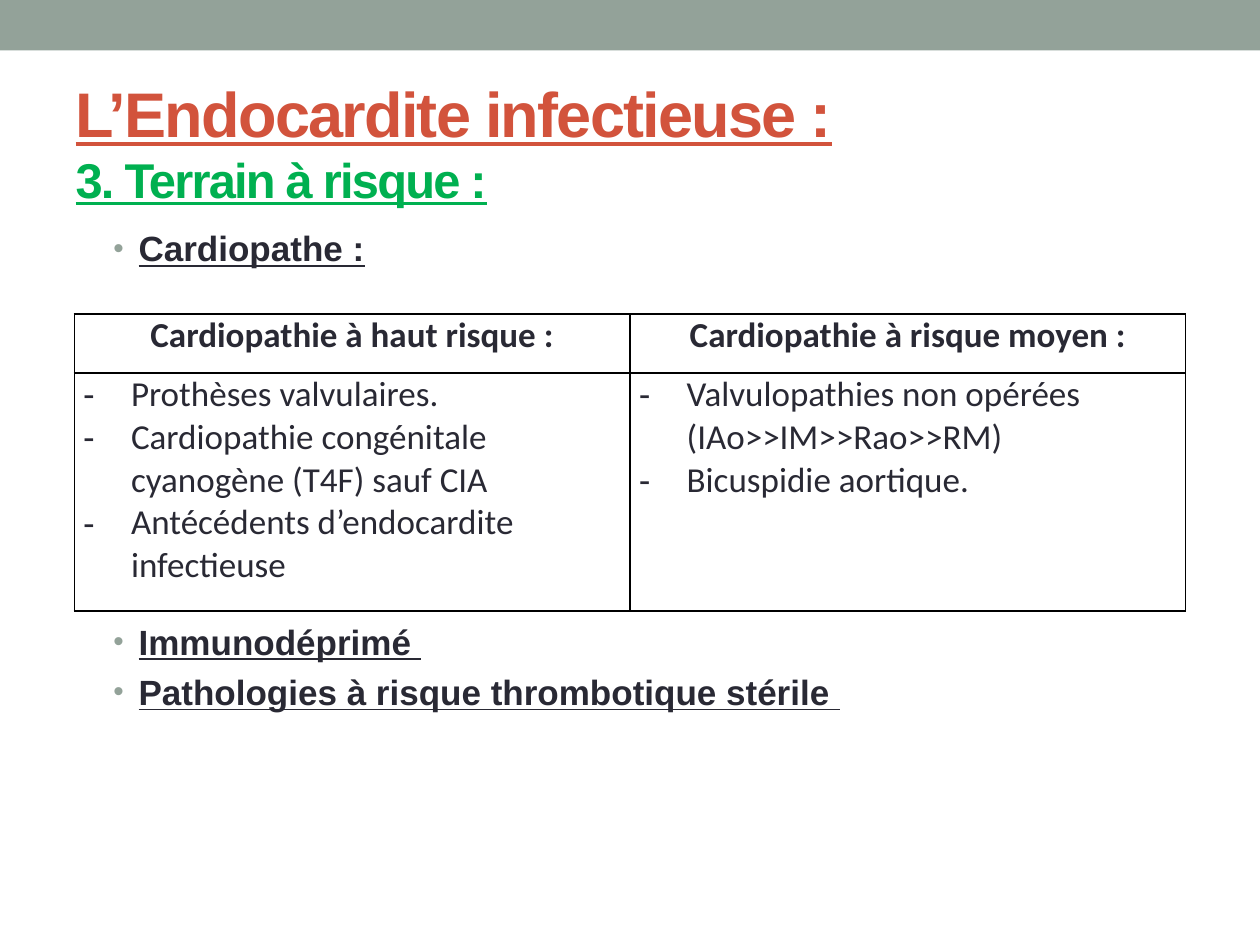
"""Build a slide on the risk groups for infective endocarditis."""
from lxml import etree
from pptx import Presentation, util as u
from pptx.dml.color import RGBColor
from pptx.enum import shapes, text
from pptx.oxml.ns import qn


class Theme:
    band, heading, section = "93A299", "D2533C", "00B050"
    ink, border = "292934", "000000"
    heading_size, section_size, body_size = 36, 27.9, 20
    text_font, table_font = "Arial", "Calibri"


def add_span(para, words, size, color, font, bold=True, underline=False):
    span = para.add_run()
    span.text = words
    span.font.size = u.Pt(size)
    span.font.name = font
    span.font.bold = bold
    span.font.underline = underline
    span.font.color.rgb = RGBColor.from_string(color)
    return span


def add_bullet(para, mark, indent, hanging, color, percent):
    props = para._p.get_or_add_pPr()
    props.set("marL", str(u.Inches(indent)))
    props.set("indent", str(-u.Inches(hanging)))
    tint = etree.SubElement(props, qn("a:buClr"))
    etree.SubElement(tint, qn("a:srgbClr"), val=color)
    etree.SubElement(props, qn("a:buSzPct"), val=str(percent * 1000))
    etree.SubElement(props, qn("a:buFont"), typeface=Theme.text_font)
    etree.SubElement(props, qn("a:buChar"), char=mark)


deck = Presentation()
deck.slide_width, deck.slide_height = u.Inches(10), u.Inches(7.5)
page = deck.slides.add_slide(deck.slide_layouts[1])

band = page.shapes.add_shape(shapes.MSO_SHAPE.RECTANGLE, 0, 0, deck.slide_width, u.Inches(0.4))
band.shadow.inherit = False
band.fill.solid()
band.fill.fore_color.rgb = RGBColor.from_string(Theme.band)
band.line.fill.background()

title, body = page.placeholders[0], page.placeholders[1]
for box, top, height in ((title, 0.58, 1.08), (body, 1.75, 5.33)):
    box.left, box.top = u.Inches(0.5), u.Inches(top)
    box.width, box.height = u.Inches(9), u.Inches(height)
    box.text_frame.word_wrap = True
    box.text_frame.auto_size = text.MSO_AUTO_SIZE.NONE

title.text_frame.vertical_anchor = text.MSO_ANCHOR.MIDDLE
para = title.text_frame.paragraphs[0]
para.alignment = text.PP_ALIGN.LEFT
heading = add_span(para, "L’Endocardite infectieuse :", Theme.heading_size,
                   Theme.heading, Theme.text_font, underline=True)
para.add_line_break()
section = add_span(para, "3. Terrain à risque :", Theme.section_size,
                   Theme.section, Theme.text_font, underline=True)
for span in (heading, section):
    span._r.get_or_add_rPr().set("spc", "-100")

groups = (("Cardiopathe :", 4.6), ("Immunodéprimé ", 201),
          ("Pathologies à risque thrombotique stérile ", 4.6))
for index, (words, gap) in enumerate(groups):
    frame = body.text_frame
    para = frame.add_paragraph() if index else frame.paragraphs[0]
    para.level = 1
    para.space_before = u.Pt(gap)
    add_bullet(para, "•", 0.5, 0.2, Theme.band, 85)
    add_span(para, words, Theme.body_size, Theme.ink, Theme.text_font, underline=True)

columns = (
    ("Cardiopathie à haut risque :",
     ("Prothèses valvulaires.",
      "Cardiopathie congénitale cyanogène (T4F) sauf CIA",
      "Antécédents d’endocardite infectieuse")),
    ("Cardiopathie à risque moyen :",
     ("Valvulopathies non opérées (IAo>>IM>>Rao>>RM)",
      "Bicuspidie aortique.")),
)
table = page.shapes.add_table(2, 2, u.Inches(0.59), u.Inches(2.49),
                              u.Inches(8.82), u.Inches(2.36)).table
table.first_row = table.horz_banding = False
table.rows[0].height, table.rows[1].height = u.Inches(0.47), u.Inches(1.89)

for column, (header, items) in enumerate(columns):
    for row, lines in enumerate(((header,), items)):
        cell = table.cell(row, column)
        cell.margin_left = cell.margin_right = u.Inches(0.07)
        cell.margin_top = cell.margin_bottom = 0
        for side in ("lnL", "lnR", "lnT", "lnB"):
            edge = etree.SubElement(cell._tc.get_or_add_tcPr(), qn("a:" + side), w=str(u.Pt(1)))
            paint = etree.SubElement(edge, qn("a:solidFill"))
            etree.SubElement(paint, qn("a:srgbClr"), val=Theme.border)
        cell.fill.background()
        for index, words in enumerate(lines):
            frame = cell.text_frame
            para = frame.add_paragraph() if index else frame.paragraphs[0]
            if row:
                add_bullet(para, "-", 0.38, 0.38, Theme.ink, 100)
            else:
                para.alignment = text.PP_ALIGN.CENTER
            add_span(para, words, Theme.body_size, Theme.ink, Theme.table_font, bold=row == 0)

deck.save("out.pptx")
